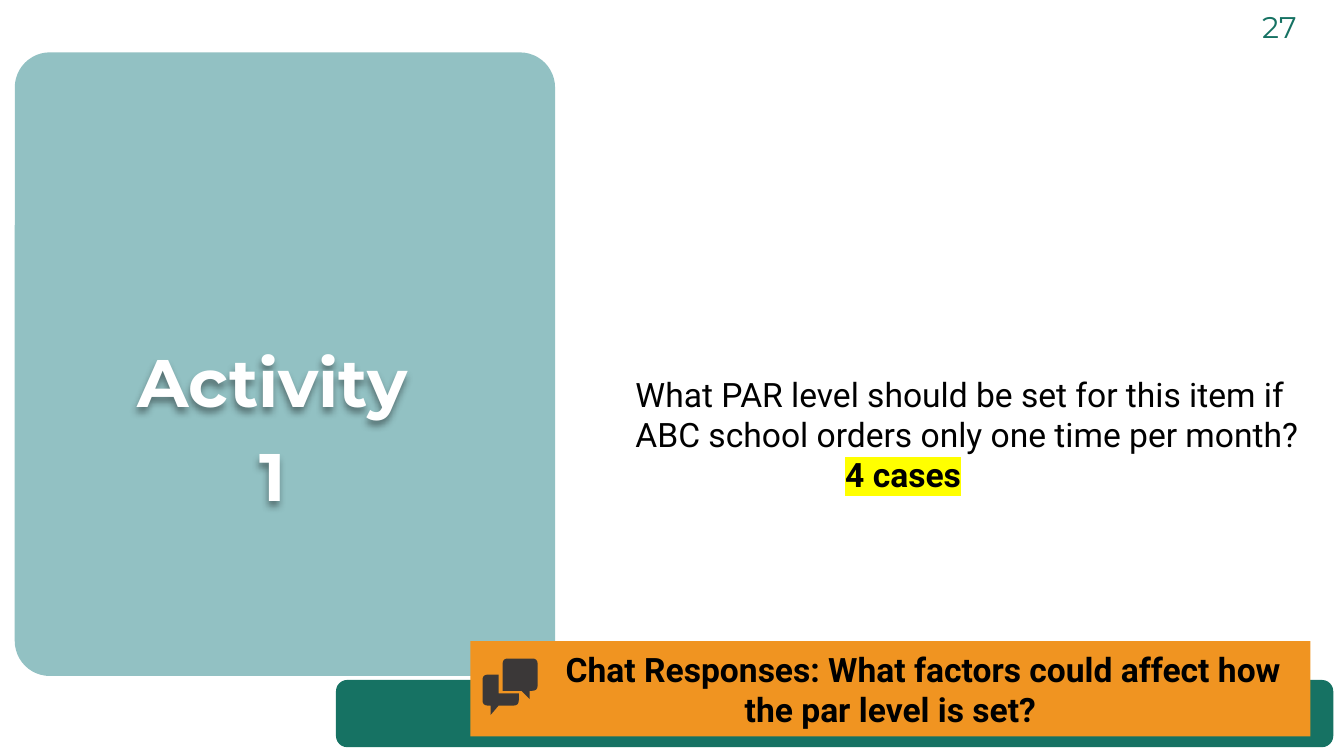
from math import dist

from lxml.etree import SubElement
from pptx import Presentation
from pptx.dml.color import RGBColor
from pptx.enum.shapes import MSO_SHAPE
from pptx.enum.text import MSO_ANCHOR, PP_ALIGN
from pptx.oxml.ns import qn
from pptx.util import Inches, Pt


def color(value):
    """Turn a hex string into a colour."""
    return RGBColor.from_string(value)


def add_text(frame, text, size=18, font="Roboto", ink="000000", bold=False,
             align=PP_ALIGN.LEFT, before=0, margin=0, indent=0, highlight=None):
    """Add one formatted paragraph to a text frame."""
    first = frame.paragraphs[0]
    para = frame.add_paragraph() if first.runs else first
    para.alignment = align
    para.space_before = Pt(before)
    properties = para._p.get_or_add_pPr()
    properties.set("marL", str(Inches(margin)))
    properties.set("indent", str(Inches(indent)))
    span = para.add_run()
    span.text = text
    if highlight:
        mark = SubElement(span._r.get_or_add_rPr(), qn("a:highlight"))
        SubElement(mark, qn("a:srgbClr"), val=highlight)
    span.font.size = Pt(size)
    span.font.name = font
    span.font.bold = bold
    span.font.color.rgb = color(ink)


def round_corners(corners, radius=0.04, steps=6):
    """Return outline points, curving each corner that is marked as round."""
    points = []
    for index, (x, y, is_round) in enumerate(corners):
        if not is_round:
            points.append((x, y))
            continue
        ends = []
        for neighbour in (corners[index - 1], corners[(index + 1) % len(corners)]):
            share = radius / dist((x, y), neighbour[:2])
            ends.append((x + share * (neighbour[0] - x), y + share * (neighbour[1] - y)))
        for step in range(steps + 1):
            t = step / steps
            points.append(tuple(
                (1 - t) ** 2 * start + 2 * t * (1 - t) * middle + t ** 2 * end
                for start, middle, end in zip(ends[0], (x, y), ends[1])))
    return [(Inches(x), Inches(y)) for x, y in points]


class Page:
    """Holds the style and the current slide."""

    teal, green, orange, dark, white = "92C1C3", "167263", "F09421", "3B3838", "FFFFFF"
    heading = "Montserrat"

    def __init__(self, deck):
        """Add a blank slide to the deck."""
        self.slide = deck.slides.add_slide(deck.slide_layouts[6])

    def paint(self, shape, fill):
        """Give a shape a plain fill with no line or shadow."""
        shape.shadow.inherit = False
        shape.fill.solid()
        shape.fill.fore_color.rgb = color(fill)
        shape.line.fill.background()
        return shape

    def panel(self, kind, left, top, width, height, fill):
        """Add a filled preset shape."""
        box = self.slide.shapes.add_shape(
            kind, Inches(left), Inches(top), Inches(width), Inches(height))
        box.text_frame.word_wrap = True
        box.text_frame.vertical_anchor = MSO_ANCHOR.MIDDLE
        return self.paint(box, fill)

    def text_box(self, left, top, width, height):
        """Add a wrapping text box."""
        box = self.slide.shapes.add_textbox(
            Inches(left), Inches(top), Inches(width), Inches(height))
        box.text_frame.word_wrap = True
        return box

    def text_shadow(self, box):
        """Cast a soft shadow from the text of an unfilled box."""
        effects = SubElement(box._element.spPr, qn("a:effectLst"))
        shadow = SubElement(effects, qn("a:outerShdw"), blurRad=str(Pt(4)),
                            dist=str(Pt(3)), dir=str(110 * 60000), algn="t", rotWithShape="0")
        tint = SubElement(shadow, qn("a:srgbClr"), val="000000")
        SubElement(tint, qn("a:alpha"), val="40000")

    def icon(self, outlines, fill):
        """Draw closed outlines as one freeform."""
        start, *rest = outlines[0]
        builder = self.slide.shapes.build_freeform(*start)
        builder.add_line_segments(rest, close=True)
        for start, *rest in outlines[1:]:
            builder.move_to(*start)
            builder.add_line_segments(rest, close=True)
        return self.paint(builder.convert_to_shape(), fill)


def main():
    """Build the activity slide."""
    deck = Presentation()
    deck.slide_width = Inches(10)
    deck.slide_height = deck.slide_width * 9 // 16
    page = Page(deck)

    card = page.panel(MSO_SHAPE.ROUNDED_RECTANGLE, 0.11, 0.39, 4.02, 4.64, page.teal)
    card.adjustments[0] = 0.065
    page.panel(MSO_SHAPE.ROUNDED_RECTANGLE, 2.5, 5.06, 7.42, 0.5, page.green)

    title = page.text_box(0.06, 2.48, 3.94, 1.95)
    for text, before in (("Activity", 0), ("1", 7.2)):
        add_text(title.text_frame, text, size=36, font=page.heading, ink=page.white,
                 bold=True, align=PP_ALIGN.CENTER, before=before)
    page.text_shadow(title)

    number = page.panel(MSO_SHAPE.RECTANGLE, 9.27, 0, 0.5, 0.39, page.white)
    add_text(number.text_frame, "27", size=16, font=page.heading, ink=page.green,
             align=PP_ALIGN.CENTER)

    question = page.text_box(4.13, 2.73, 5.72, 1.01)
    add_text(question.text_frame, "What PAR level should be set for this item if "
             "ABC school orders only one time per month?", margin=0.5)
    add_text(question.text_frame, "4 cases", bold=True, margin=2.06, highlight="FFFF00")

    chat = page.panel(MSO_SHAPE.RECTANGLE, 3.5, 4.77, 6.25, 0.71, page.orange)
    add_text(chat.text_frame, "Chat Responses: What factors could affect how the par "
             "level is set?", bold=True, align=PP_ALIGN.CENTER, indent=0.49)

    back_bubble = [
        (3.71, 5.16, False), (3.71, 5.02, False), (3.59, 5.02, True),
        (3.59, 5.25, True), (3.65, 5.25, False), (3.65, 5.32, False),
        (3.71, 5.25, False), (3.86, 5.25, True), (3.86, 5.16, False)]
    front_bubble = [
        (3.74, 4.9, True), (3.74, 5.14, False), (3.88, 5.14, False),
        (3.94, 5.2, False), (3.94, 5.14, False), (4, 5.14, True), (4, 4.9, True)]
    page.icon([round_corners(back_bubble), round_corners(front_bubble)], page.dark)

    deck.save("out.pptx")


if __name__ == "__main__":
    main()
